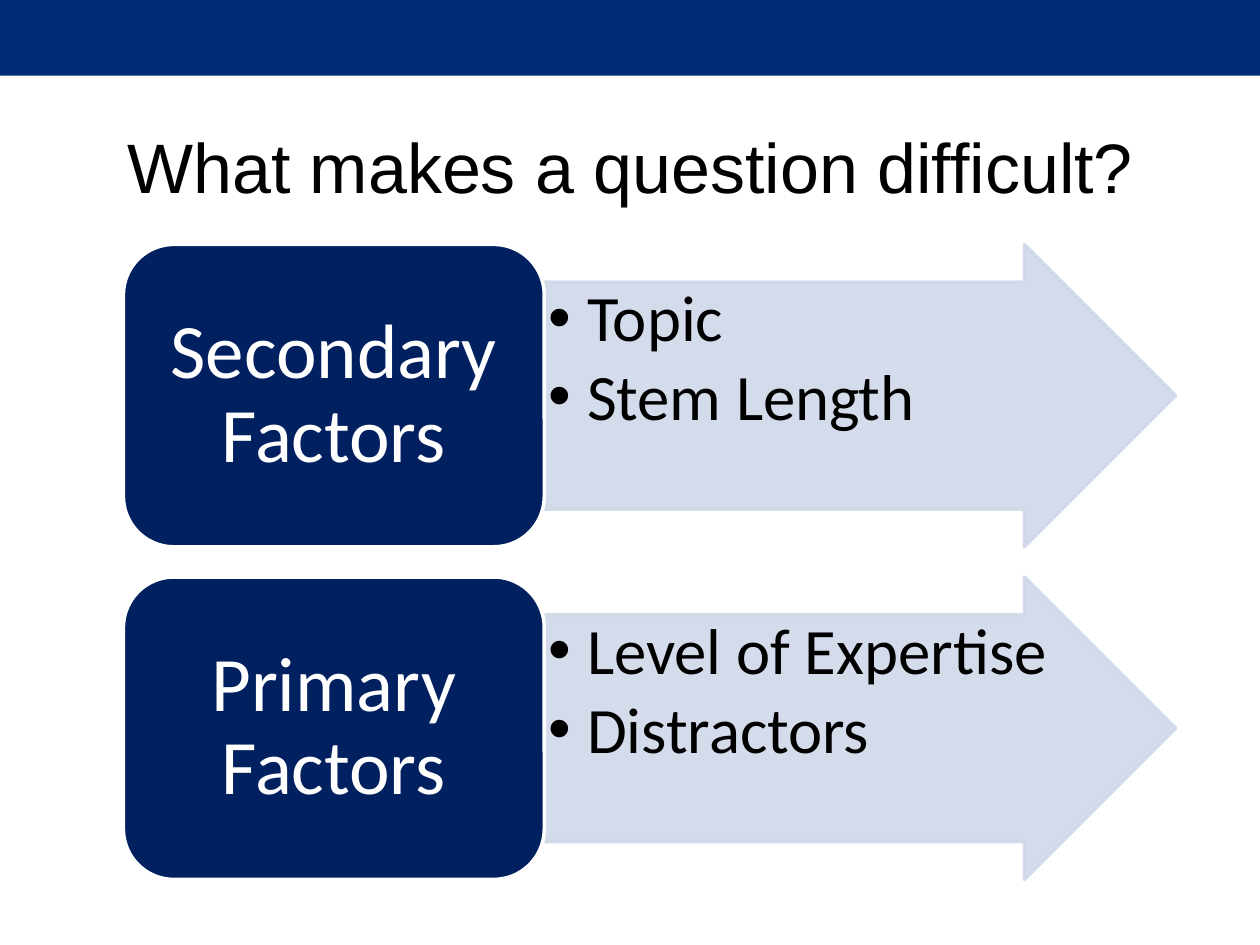
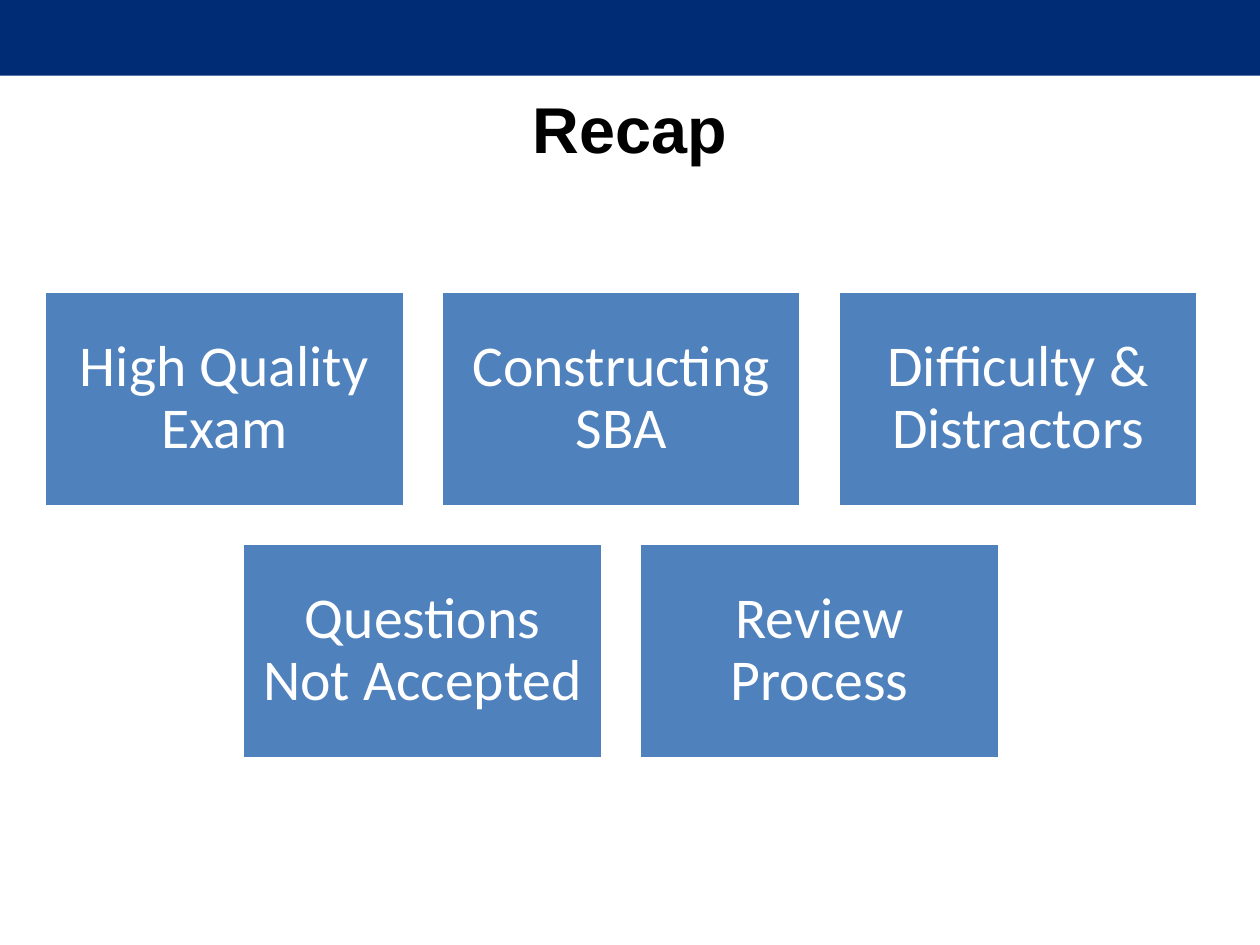
from lxml import etree
from pptx import Presentation
from pptx.dml.color import RGBColor
from pptx.enum.shapes import MSO_SHAPE
from pptx.enum.text import MSO_ANCHOR, PP_ALIGN
from pptx.oxml.ns import qn
from pptx.util import Inches, Pt

RECTANGLE = MSO_SHAPE.RECTANGLE
ROUNDED = MSO_SHAPE.ROUNDED_RECTANGLE
RIGHT_ARROW = MSO_SHAPE.RIGHT_ARROW
CENTER, LEFT = PP_ALIGN.CENTER, PP_ALIGN.LEFT
MIDDLE, TOP = MSO_ANCHOR.MIDDLE, MSO_ANCHOR.TOP

BAND_BLUE = RGBColor(0x00, 0x2C, 0x76)
NAVY = RGBColor(0x00, 0x20, 0x60)
TILE_BLUE = RGBColor(0x4F, 0x81, 0xBD)
PALE_BLUE = RGBColor(0xD0, 0xD8, 0xE8)
WHITE = RGBColor(0xFF, 0xFF, 0xFF)
BLACK = RGBColor(0x00, 0x00, 0x00)

TITLE_FONT, BODY_FONT = "Arial", "Calibri"

FACTORS = [
    ("Secondary Factors", ["Topic", "Stem Length"]),
    ("Primary Factors", ["Level of Expertise", "Distractors"]),
]
RECAP_ROWS = [
    ["High Quality Exam", "Constructing SBA", "Difficulty & Distractors"],
    ["Questions Not Accepted", "Review Process"],
]


def add_block(page, kind, left, top, width, height, fill, line=None):
    block = page.shapes.add_shape(
        kind, Inches(left), Inches(top), Inches(width), Inches(height))
    block.shadow.inherit = False
    block.fill.solid()
    block.fill.fore_color.rgb = fill
    if line is None:
        block.line.fill.background()
    else:
        block.line.color.rgb = line
        block.line.width = Pt(2)
    return block


def set_frame(box, anchor, side, vertical):
    frame = box.text_frame
    frame.word_wrap = True
    frame.vertical_anchor = anchor
    frame.margin_left = frame.margin_right = Inches(side)
    frame.margin_top = frame.margin_bottom = Inches(vertical)
    return frame


def write(para, text, size, font, color, align=CENTER, bold=False):
    para.alignment = align
    span = para.add_run()
    span.text = text
    span.font.size = Pt(size)
    span.font.name = font
    span.font.color.rgb = color
    span.font.bold = bold


def add_bullet(para, indent):
    properties = para._p.get_or_add_pPr()
    properties.set("marL", str(Inches(indent)))
    properties.set("indent", str(-Inches(indent)))
    etree.SubElement(properties, qn("a:buFont"), typeface="Arial")
    etree.SubElement(properties, qn("a:buChar"), char="•")


def set_opacity(block, percent):
    for color in block._element.spPr.iter(qn("a:srgbClr")):
        etree.SubElement(color, qn("a:alpha"), val=str(percent * 1000))


def add_page(deck, title, size, title_height, bold=False):
    page = deck.slides.add_slide(deck.slide_layouts[6])
    add_block(page, RECTANGLE, 0, 0, 10, 0.6, BAND_BLUE)
    box = page.shapes.add_textbox(
        Inches(0.5), Inches(0.69), Inches(9), Inches(title_height))
    frame = set_frame(box, MIDDLE, 0.1, 0.05)
    write(frame.paragraphs[0], title, size, TITLE_FONT, BLACK, bold=bold)
    return page


def add_label(block, text, size, side, vertical):
    para = set_frame(block, MIDDLE, side, vertical).paragraphs[0]
    para.line_spacing = 0.9
    write(para, text, size, BODY_FONT, WHITE)


def add_factor(page, top, name, points):
    arrow = add_block(page, RIGHT_ARROW, 4.32, top, 5.01, 2.4, PALE_BLUE, PALE_BLUE)
    arrow.adjustments[0] = 0.75
    arrow.adjustments[1] = 0.5
    set_opacity(arrow, 90)
    frame = set_frame(arrow, TOP, 0.03, 0.03)
    for index, point in enumerate(points):
        para = frame.add_paragraph() if index else frame.paragraphs[0]
        add_bullet(para, 0.31)
        para.line_spacing = 0.9
        para.space_after = Pt(5)
        write(para, point, 37, BODY_FONT, BLACK, LEFT)
    label = add_block(page, ROUNDED, 0.98, top, 3.34, 2.4, NAVY, WHITE)
    add_label(label, name, 44, 0.18, 0.09)


def add_tiles(page, rows):
    width, height, gap, center = 2.86, 1.71, 0.29, 4.93
    for row, names in enumerate(rows):
        row_width = len(names) * (width + gap) - gap
        top = 2.31 + row * (height + gap)
        for column, name in enumerate(names):
            left = center - row_width / 2 + column * (width + gap)
            tile = add_block(page, RECTANGLE, left, top, width, height, TILE_BLUE, WHITE)
            add_label(tile, name, 33, 0.14, 0.14)


def main():
    deck = Presentation()
    deck.slide_width, deck.slide_height = Inches(10), Inches(7.5)

    page = add_page(deck, "What makes a question difficult?", 40, 1.25)
    for index, (name, points) in enumerate(FACTORS):
        add_factor(page, 1.94 + index * 2.64, name, points)

    page = add_page(deck, "Recap", 37, 0.65, bold=True)
    add_tiles(page, RECAP_ROWS)

    deck.save("out.pptx")


if __name__ == "__main__":
    main()
